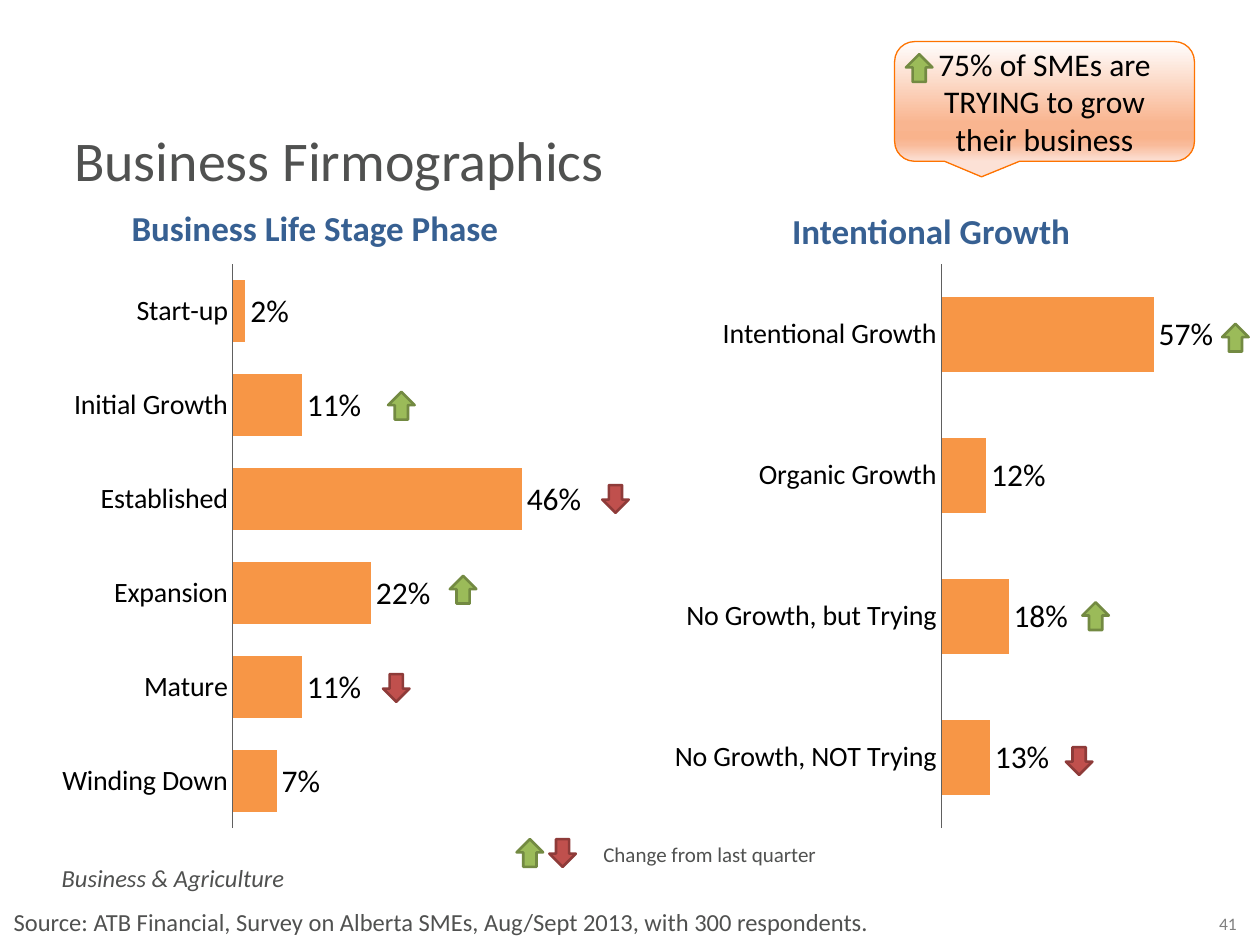
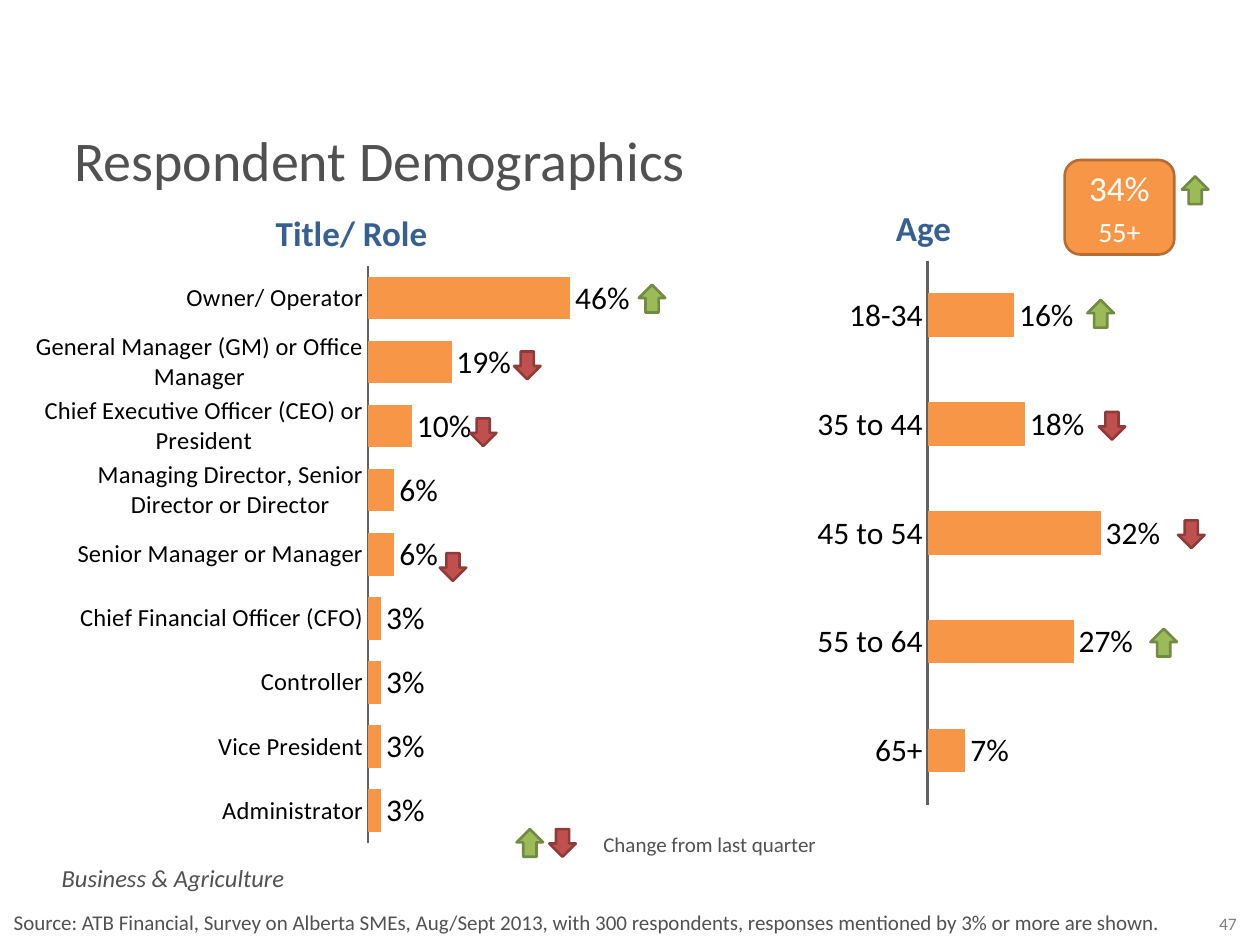
from lxml import etree
from pptx import Presentation
from pptx.chart.data import CategoryChartData
from pptx.dml.color import RGBColor
from pptx.enum import chart as ch, shapes, text
from pptx.oxml import parse_xml
from pptx.oxml.ns import nsdecls, qn
from pptx.util import Inches, Pt

FONT = "Calibri"
BLACK = RGBColor(0x00, 0x00, 0x00)
WHITE = RGBColor(0xFF, 0xFF, 0xFF)
GRAY = RGBColor(0x50, 0x51, 0x50)
PAGE_GRAY = RGBColor(0x80, 0x80, 0x80)
AXIS_GRAY = RGBColor(0x60, 0x60, 0x60)
BLUE = RGBColor(0x37, 0x60, 0x92)
ORANGE = RGBColor(0xF7, 0x96, 0x46)
ORANGE_EDGE = RGBColor(0xB6, 0x6D, 0x31)
CALLOUT_EDGE = RGBColor(0xFE, 0x73, 0x00)
GREEN = RGBColor(0x9B, 0xBB, 0x59)
GREEN_EDGE = RGBColor(0x73, 0x8A, 0x42)
RED = RGBColor(0xC0, 0x50, 0x4D)
RED_EDGE = RGBColor(0x8E, 0x3B, 0x39)
CALLOUT_STOPS = [(0, "FFFEFE"), (68, "F9B590"), (81, "F9B38C"),
                 (86, "F9BA99"), (100, "FCE1D6")]
PLOT_HEIGHT = 0.96
CENTER = text.PP_ALIGN.CENTER


def write(p, words, size=18, color=GRAY, bold=False, italic=False,
          align=None, before=None):
    p.alignment = align
    if before is not None:
        p.space_before = Pt(before)
    r = p.add_run()
    r.text = words
    f = r.font
    f.name, f.size, f.bold, f.italic = FONT, Pt(size), bold, italic
    f.color.rgb = color


def add_text(s, words, x, y, w, h, **fmt):
    tf = s.shapes.add_textbox(Inches(x), Inches(y), Inches(w), Inches(h)).text_frame
    tf.word_wrap = True
    write(tf.paragraphs[0], words, **fmt)


def add_box(s, kind, x, y, w, h, fill, edge, width):
    sp = s.shapes.add_shape(kind, Inches(x), Inches(y), Inches(w), Inches(h))
    sp.shadow.inherit = False
    sp.fill.solid()
    sp.fill.fore_color.rgb = fill
    sp.line.color.rgb = edge
    sp.line.width = Pt(width)
    sp.text_frame.word_wrap = True
    sp.text_frame.vertical_anchor = text.MSO_ANCHOR.MIDDLE
    return sp


def add_arrow(s, direction, x, y):
    up = direction == "up"
    sp = add_box(s, shapes.MSO_SHAPE.DOWN_ARROW, x, y, 0.21, 0.22,
                 GREEN if up else RED, GREEN_EDGE if up else RED_EDGE, 1.5)
    sp.rotation = 180 if up else 0


def add_legend(s, y):
    add_arrow(s, "up", 4.1, y)
    add_arrow(s, "down", 4.36, y)
    add_text(s, "Change from last quarter", 4.69, y - 0.03, 2.44, 0.31, size=12)


def set_plot_area(chart, width):
    plot_area = chart._chartSpace.chart.plotArea
    for old in plot_area.findall(qn("c:layout")):
        plot_area.remove(old)
    layout = parse_xml(f"<c:layout {nsdecls('c')}/>")
    manual = etree.SubElement(layout, qn("c:manualLayout"))
    settings = [("layoutTarget", "inner"), ("xMode", "edge"), ("yMode", "edge"),
                ("x", round(1 - width, 3)), ("y", 0), ("w", width), ("h", PLOT_HEIGHT)]
    for tag, value in settings:
        etree.SubElement(manual, qn(f"c:{tag}")).set("val", str(value))
    plot_area.insert(0, layout)


def style_font(font, size):
    font.name, font.size = FONT, Pt(size)
    font.color.rgb = BLACK


def add_bars(s, values, x, y, w, h, top, plot_width, gap, cat_size, axis_width):
    data = CategoryChartData(number_format="0%")
    data.categories = list(values)
    data.add_series("Series 1", list(values.values()))
    chart = s.shapes.add_chart(ch.XL_CHART_TYPE.BAR_CLUSTERED, Inches(x), Inches(y),
                               Inches(w), Inches(h), data).chart
    style_font(chart.font, 18)
    chart.has_legend = False
    chart.has_title = False

    cat = chart.category_axis
    cat.reverse_order = True
    cat.major_tick_mark = ch.XL_TICK_MARK.NONE
    cat.has_major_gridlines = False
    style_font(cat.tick_labels.font, cat_size)
    cat.format.line.color.rgb = AXIS_GRAY
    cat.format.line.width = Pt(axis_width)

    val = chart.value_axis
    val.minimum_scale, val.maximum_scale = 0, top
    val.has_major_gridlines = False
    val.visible = False

    plot = chart.plots[0]
    plot.gap_width = gap
    plot.vary_by_categories = False
    fill = plot.series[0].format.fill
    fill.solid()
    fill.fore_color.rgb = ORANGE
    plot.has_data_labels = True
    labels = plot.data_labels
    labels.show_value = True
    labels.number_format = "0%"
    labels.number_format_is_linked = False
    labels.position = ch.XL_LABEL_POSITION.OUTSIDE_END
    style_font(labels.font, 18)
    set_plot_area(chart, plot_width)


def add_growth_callout(s):
    sp = add_box(s, shapes.MSO_SHAPE.ROUNDED_RECTANGULAR_CALLOUT,
                 7.1, 0.33, 2.38, 0.95, WHITE, CALLOUT_EDGE, 0.75)
    sp.adjustments[0], sp.adjustments[1] = -0.21, 0.63
    sp.fill.gradient()
    sp.fill.gradient_angle = 270
    stops = sp._element.spPr.find(qn("a:gradFill")).find(qn("a:gsLst"))
    for old in list(stops):
        stops.remove(old)
    for percent, color in CALLOUT_STOPS:
        stop = etree.SubElement(stops, qn("a:gs"), pos=str(percent * 1000))
        etree.SubElement(stop, qn("a:srgbClr"), val=color)
    write(sp.text_frame.paragraphs[0], "75% of SMEs are TRYING to grow their business",
          color=BLACK, align=CENTER)


def add_age_badge(s):
    sp = add_box(s, shapes.MSO_SHAPE.ROUNDED_RECTANGLE, 8.45, 1.27, 0.87, 0.75,
                 ORANGE, ORANGE_EDGE, 1.5)
    tf = sp.text_frame
    write(tf.paragraphs[0], "34%", size=20, color=WHITE, align=CENTER)
    write(tf.add_paragraph(), "55+", size=16, color=WHITE, align=CENTER, before=3)


def add_heading(s, words, x, y, w):
    add_text(s, words, x, y, w, 0.44, size=20, color=BLUE, bold=True, align=CENTER)


def add_frame(prs, title, page):
    s = prs.slides.add_slide(prs.slide_layouts[6])
    add_text(s, page, 9.5, 7.2, 0.49, 0.27, size=10, color=PAGE_GRAY, align=CENTER)
    add_text(s, "Business & Agriculture", 0.39, 6.8, 2.81, 0.34, size=14, italic=True)
    add_text(s, title, 0.49, 0.95, 5.84, 0.64, size=32)
    return s


def build_firmographics(prs):
    s = add_frame(prs, "Business Firmographics", "41")
    add_text(s, "Source: ATB Financial, Survey on Alberta SMEs, Aug/Sept 2013, "
             "with 300 respondents.", 0.01, 7.15, 7.09, 0.34, size=14)
    add_heading(s, "Business Life Stage Phase", 0.75, 1.59, 3.5)
    add_heading(s, "Intentional Growth", 6.11, 1.61, 2.56)
    stages = {"Start-up": 0.02, "Initial Growth": 0.11, "Established": 0.46,
              "Expansion": 0.22, "Mature": 0.11, "Winding Down": 0.07}
    growth = {"Intentional Growth": 0.57, "Organic Growth": 0.12,
              "No Growth, but Trying": 0.18, "No Growth, NOT Trying": 0.13}
    add_bars(s, stages, -0.72, 2.09, 5.81, 4.67, top=0.65, plot_width=0.558,
             gap=50, cat_size=16, axis_width=0.75)
    add_bars(s, growth, 5.23, 2.09, 4.46, 4.67, top=0.75, plot_width=0.497,
             gap=90, cat_size=16, axis_width=0.75)
    add_growth_callout(s)
    add_legend(s, 6.66)
    for arrow in [("up", 7.19, 0.43), ("up", 3.08, 3.11), ("down", 4.78, 3.85),
                  ("up", 3.57, 4.57), ("down", 3.04, 5.35), ("up", 9.7, 2.57),
                  ("up", 8.59, 4.78), ("down", 8.46, 5.93)]:
        add_arrow(s, *arrow)


def build_demographics(prs):
    s = add_frame(prs, "Respondent Demographics", "47")
    add_text(s, "Source: ATB Financial, Survey on Alberta SMEs, Aug/Sept 2013, with 300 "
             "respondents, responses mentioned by 3% or more are shown.",
             0.01, 7.17, 9.99, 0.3, size=12)
    roles = {"Owner/ Operator": 0.46, "General Manager (GM) or Office Manager": 0.19,
             "Chief Executive Officer (CEO) or President": 0.1,
             "Managing Director, Senior Director or Director": 0.06,
             "Senior Manager or Manager": 0.06, "Chief Financial Officer (CFO)": 0.03,
             "Controller": 0.03, "Vice President": 0.03, "Administrator": 0.03}
    ages = {"18-34": 0.16, "35 to 44": 0.18, "45 to 54": 0.32,
            "55 to 64": 0.27, "65+": 0.07}
    add_bars(s, roles, 0.28, 2.1, 4.91, 4.78, top=0.65, plot_width=0.462,
             gap=50, cat_size=14, axis_width=1.5)
    add_bars(s, ages, 5.19, 2.06, 4.32, 4.51, top=0.5, plot_width=0.497,
             gap=150, cat_size=18, axis_width=1.5)
    add_age_badge(s)
    add_heading(s, "Title/ Role", 1.67, 1.63, 2.24)
    add_heading(s, "Age", 6.21, 1.59, 2.24)
    add_legend(s, 6.58)
    for arrow in [("up", 9.38, 1.4), ("up", 5.07, 2.26), ("down", 4.08, 2.79),
                  ("down", 3.73, 3.32), ("down", 3.49, 4.39), ("up", 8.63, 2.38),
                  ("down", 8.72, 3.27), ("down", 9.35, 4.13), ("up", 9.13, 4.99)]:
        add_arrow(s, *arrow)


def main():
    prs = Presentation()
    prs.slide_width, prs.slide_height = Inches(10), Inches(7.5)
    build_firmographics(prs)
    build_demographics(prs)
    prs.save("out.pptx")


if __name__ == "__main__":
    main()
